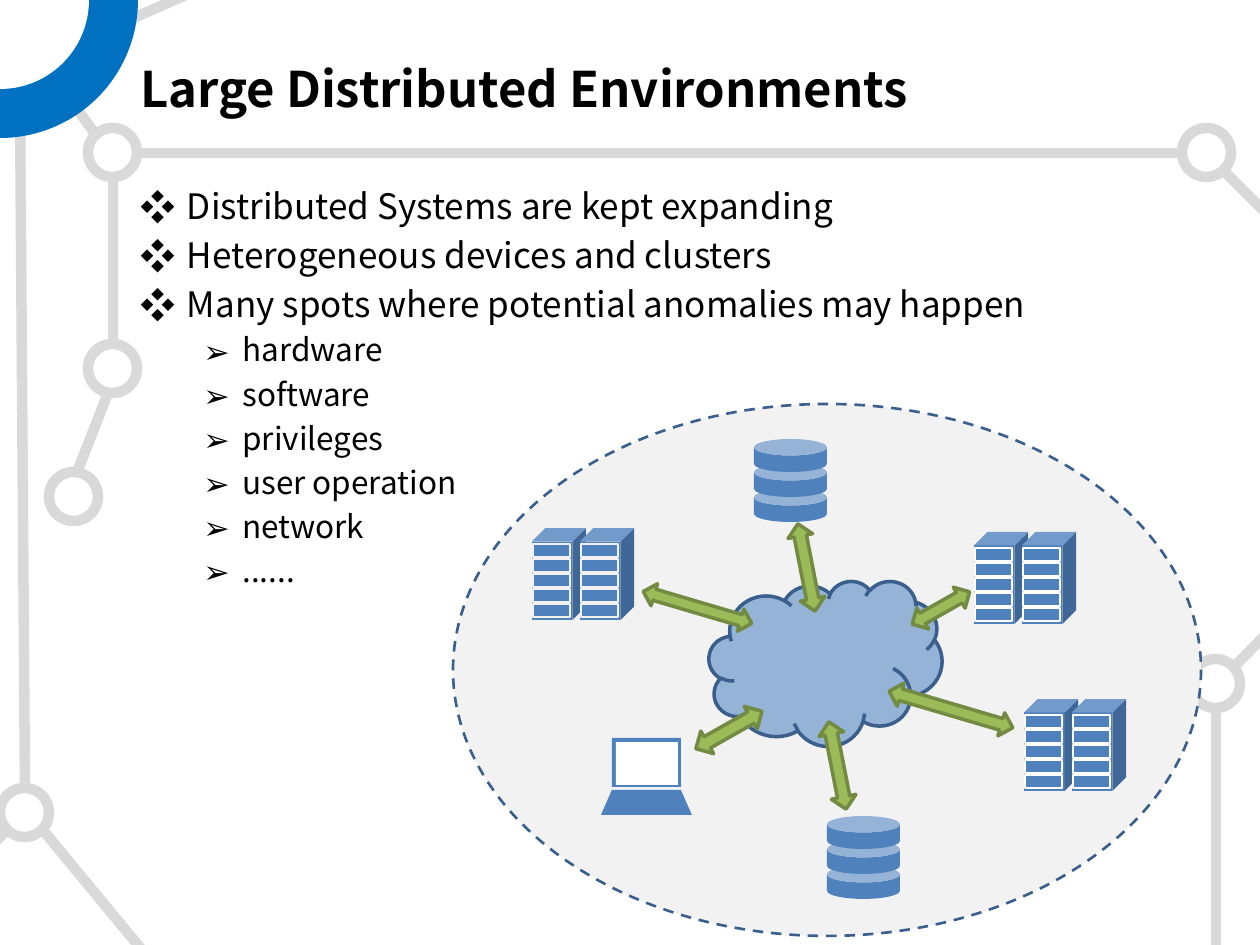
from lxml import etree
from pptx import Presentation
from pptx.dml.color import RGBColor as RGB
from pptx.enum.dml import MSO_LINE as Dash
from pptx.enum.shapes import MSO_CONNECTOR as Wire, MSO_SHAPE as Form
from pptx.enum.text import MSO_ANCHOR as Anchor
from pptx.oxml.ns import qn
from pptx.util import Emu, Inches, Pt

PX = 914400 / 126
FONT = "Noto Sans CJK SC"
HUE = {
    "white": "FFFFFF", "black": "000000", "grey": "D9D9D9", "pale": "F2F2F2",
    "ring": "0070C0", "blue": "4F81BD", "navy": "3A5F8C", "sky": "95B3D7",
    "green": "9BBB59", "olive": "738A42",
}


def draw(home, form, spot, fill, line=None, width=1):
    shape = home.shapes.add_shape(form, *[Emu(round(n * PX)) for n in spot])
    shape.shadow.inherit = False
    shape.fill.solid()
    shape.fill.fore_color.rgb = RGB.from_string(HUE[fill])
    if line:
        shape.line.color.rgb = RGB.from_string(HUE[line])
        shape.line.width = Pt(width)
    else:
        shape.line.fill.background()
    return shape


def write(par, text, size, bold=False):
    run = par.add_run()
    run.text = text
    run.font.name = FONT
    run.font.size = Pt(size)
    run.font.bold = bold
    run.font.color.rgb = RGB.from_string(HUE["black"])


deck = Presentation()
deck.slide_width, deck.slide_height = Inches(10), Inches(7.5)
slide = deck.slides.add_slide(deck.slide_layouts[6])

wires = [
    (129, 20, 197, -10), (20, 98, 25, 788), (69, 98, 96, 135),
    (137, 153, 1182, 153), (113, 178, 113, 345), (-20, 857, 8, 829),
    (42, 829, 147, 956), (1223, 170, 1270, 217), (108, 393, 78, 470),
    (1280, 620, 1234, 667), (1216, 709, 1216, 945),
]
for ends in wires:
    wire = slide.shapes.add_connector(Wire.STRAIGHT, *[Emu(round(n * PX)) for n in ends])
    wire.line.color.rgb = RGB.from_string(HUE["grey"])
    wire.line.width = Pt(6)
    etree.SubElement(wire._element.spPr, qn("a:effectLst"))

for x, y in [(88, 128), (1182, 128), (0, 788), (88, 344), (49, 472), (1191, 659)]:
    draw(slide, Form.OVAL, (x, y, 49, 49), "white", "grey", 6)

ring = slide.shapes.add_group_shape()
for half, fill in [(138, "ring"), (89, "white")]:
    pie = draw(ring, Form.PIE, (-half, -half, 2 * half, 2 * half), fill)
    pie.adjustments[0] = 0
    pie.adjustments[1] = 54

title = slide.shapes.add_textbox(*[Emu(round(n * PX)) for n in (128, 38, 1068, 100)])
title.text_frame.word_wrap = True
title.text_frame.vertical_anchor = Anchor.MIDDLE
write(title.text_frame.paragraphs[0], "Large Distributed Environments", 28, True)

body = slide.shapes.add_textbox(*[Emu(round(n * PX)) for n in (128, 178, 1068, 667)])
frame = body.text_frame
frame.word_wrap = True
levels = [
    (0, 20, "❖", 0.37, -0.37, [
        "Distributed Systems are kept expanding",
        "Heterogeneous devices and clusters",
        "Many spots where potential anomalies may happen",
    ]),
    (1, 18, "➢", 0.81, -0.31, [
        "hardware", "software", "privileges", "user operation", "network", "......",
    ]),
]
par = frame.paragraphs[0]
for level, size, mark, left, hang, items in levels:
    for item in items:
        if par.runs:
            par = frame.add_paragraph()
        par.level = level
        par.space_before = Pt(size / 5)
        props = par._p.get_or_add_pPr()
        props.set("marL", str(Inches(left)))
        props.set("indent", str(Inches(hang)))
        etree.SubElement(props, qn("a:buFont")).set("typeface", FONT)
        etree.SubElement(props, qn("a:buChar")).set("char", mark)
        write(par, item, size)

zone = draw(slide, Form.OVAL, (453, 404, 748, 532), "pale", "navy", 1.5)
zone.line.dash_style = Dash.DASH

for x, y in [(754, 439), (827, 816)]:
    store = slide.shapes.add_group_shape()
    for row in (2, 1, 0):
        disk = draw(store, Form.CAN, (x, y + 25 * row, 73, 33), "blue")
        disk.adjustments[0] = 0.5

for x, y, edge in [(532, 528, "pale"), (1024, 699, "white"), (974, 532, "white")]:
    rack = slide.shapes.add_group_shape()
    for left in (x, x + 48):
        draw(rack, Form.CUBE, (left, y, 54, 92), "blue")
        for row in range(5):
            draw(rack, Form.RECTANGLE, (left + 1, y + 16 + 15 * row, 37, 13), "blue", edge)

draw(slide, Form.CLOUD, (709, 581, 233, 165), "sky", "navy", 2)

arrows = [
    (794, 523, 25, 89, 348.9), (825, 721, 25, 89, 348.9),
    (686, 551, 23, 113, 286.4), (939, 645, 24, 129, 286.4),
    (716, 692, 26, 76, 240.5), (929, 575, 24, 66, 240.5),
]
for *spot, turn in arrows:
    draw(slide, Form.UP_DOWN_ARROW, spot, "green", "olive", 2).rotation = turn

laptop = slide.shapes.add_group_shape()
draw(laptop, Form.RECTANGLE, (612, 738, 69, 49), "blue")
draw(laptop, Form.RECTANGLE, (616, 742, 62, 43), "white")
base = draw(laptop, Form.TRAPEZOID, (601, 790, 91, 25), "blue")
base.adjustments[0] = 0.44

deck.save("out.pptx")
